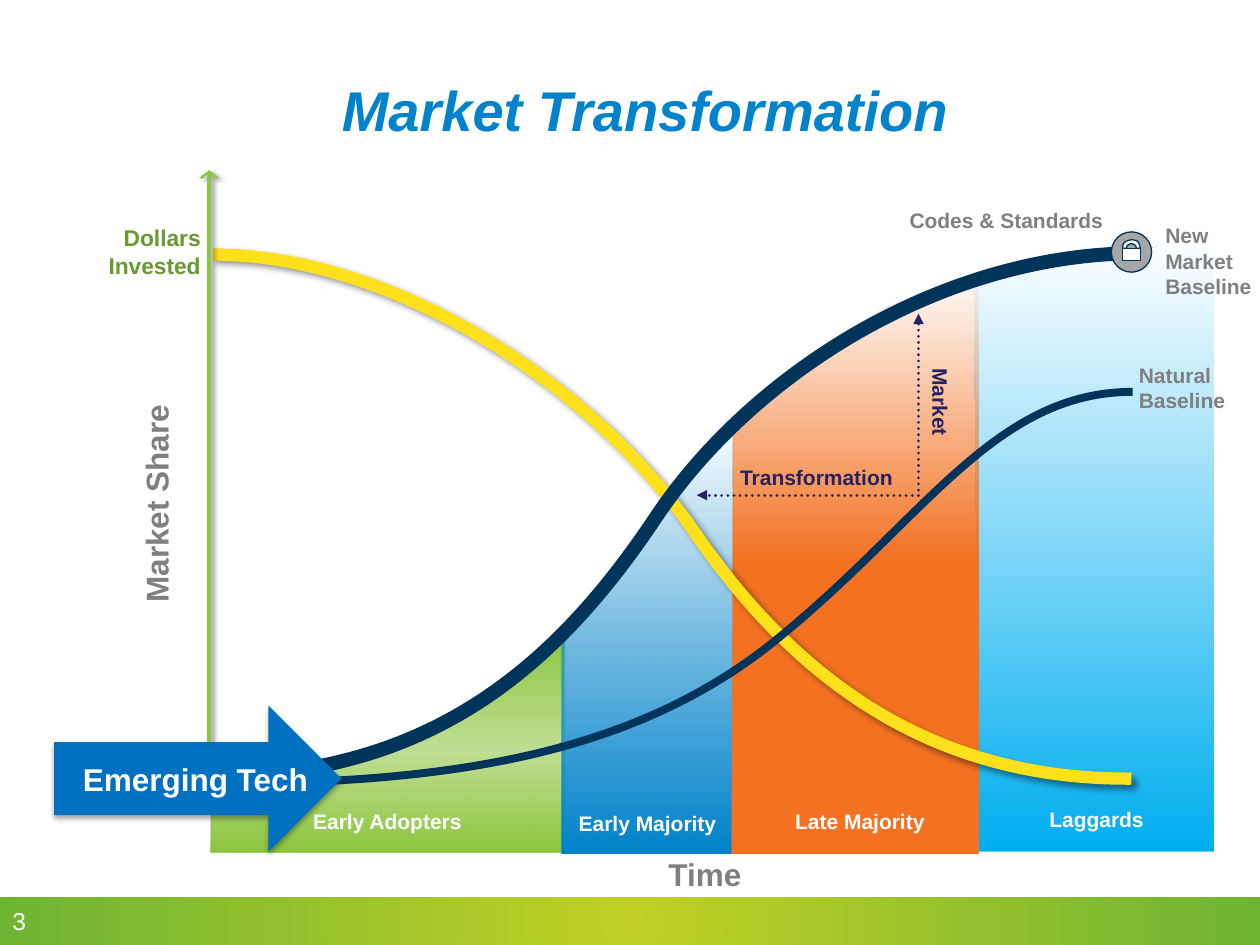
from lxml import etree
from pptx import Presentation
from pptx.dml.color import RGBColor
from pptx.enum.dml import MSO_LINE
from pptx.enum.shapes import MSO_CONNECTOR, MSO_SHAPE
from pptx.enum.text import MSO_ANCHOR, PP_ALIGN as ALIGN
from pptx.oxml import parse_xml
from pptx.oxml.ns import nsdecls, qn
from pptx.util import Inches, Pt

GRAY, NAVY, INDIGO, WHITE = "808080", "00345B", "262262", "FFFFFF"
LINEAR = '<a:lin ang="{}" scaled="0"/>'
UP, DOWN = LINEAR.format(16200000), LINEAR.format(5400000)
RADIAL = '<a:path path="circle"><a:fillToRect l="50000" t="50000" r="50000" b="50000"/></a:path>'

STAGES = [
    ([(8.54, 2.05), (8.94, 2.02), (9.43, 1.9), (9.64, 1.89), (9.64, 6.76), (7.77, 6.76),
      (7.73, 2.24), (8.13, 2.11)],
     [(0, "00AEEF", 100), (100, WHITE, 100)], UP),
    ([(3.34, 5.83), (3.86, 5.54), (4.08, 5.39), (4.48, 5.01), (4.47, 6.77), (1.67, 6.77),
      (1.68, 6.15), (2.03, 6.15), (2.49, 6.09), (2.93, 5.99)],
     [(0, "8DC63F", 100), (46, "8DC63F", 55), (100, "8DC63F", 100)], UP),
    ([(5.11, 4.16), (5.4, 3.78), (5.82, 3.33), (5.82, 6.77), (4.46, 6.77), (4.46, 5.01),
      (4.88, 4.52)],
     [(0, "0083CA", 0), (50, "0083CA", 54), (100, "0083CA", 100)], DOWN),
    ([(6.65, 2.66), (7.04, 2.43), (7.49, 2.24), (7.77, 2.16), (7.77, 6.77), (5.81, 6.77),
      (5.82, 3.39), (6.21, 3.01)],
     [(0, "F37121", 100), (50, "F37121", 100), (100, "F37121", 0)], UP),
]
DOLLARS_CURVE = [(1.68, 2.02), (3.12, 2.02), (4.7, 3.05), (5.51, 4.22),
                 (6.32, 5.4), (7.4, 6.19), (8.98, 6.18)]
NATURAL_CURVE = [(1.68, 6.22), (3.48, 6.22), (5.01, 6.02), (6.17, 5.07),
                 (7.33, 4.13), (7.89, 3.11), (8.99, 3.11)]
MARKET_CURVE = [(1.68, 6.16), (3.48, 6.16), (4.47, 5.21), (5.21, 4.1),
                (5.96, 2.98), (7.45, 2.02), (9.02, 2.01)]
S_CURVE = [3, 3]
SHACKLE = [(8.91, 1.97), (8.91, 1.94), (8.92, 1.92), (8.95, 1.91), (8.97, 1.9),
           (9, 1.9), (9.02, 1.91), (9.04, 1.92), (9.05, 1.95), (9.05, 1.97),
           (9.02, 1.97), (9.02, 1.96), (9.01, 1.94), (9, 1.94), (8.99, 1.93),
           (8.97, 1.93), (8.96, 1.94), (8.95, 1.94), (8.94, 1.96), (8.94, 1.97)]
SHACKLE_SEGMENTS = [3, 3, 3, 1, 3, 3, 3]
LABELS = [
    ("Time", (4.49, 6.74, 2.21, 0.4), dict(size=18, color=GRAY, align=ALIGN.CENTER)),
    ("Natural Baseline", (8.94, 2.83, 1.06, 0.5), dict(color=GRAY)),
    ("Codes & Standards", (7.12, 1.6, 1.79, 0.3), dict(color=GRAY)),
    ("New\vMarket\vBaseline", (9.15, 1.72, 1.06, 0.71), dict(color=GRAY)),
    ("Market Share", (0.34, 3.78, 1.8, 0.4), dict(size=18, color=GRAY, rotation=270)),
    ("Early Majority", (4.46, 6.41, 1.36, 0.29), dict(align=ALIGN.CENTER, spacing=0.9)),
    ("Late Majority", (5.83, 6.37, 1.99, 0.3), dict(align=ALIGN.CENTER)),
    ("Early Adopters", (1.68, 6.37, 2.79, 0.3), dict(align=ALIGN.CENTER)),
    ("Laggards", (8.23, 6.35, 0.96, 0.3), dict(wrap=False)),
    ("Transformation", (5.57, 3.64, 1.82, 0.3), dict(color=INDIGO, align=ALIGN.CENTER)),
    ("Market", (6.56, 3.04, 1.81, 0.3), dict(color=INDIGO, align=ALIGN.CENTER, rotation=90)),
    ("Emerging Tech", (0.56, 5.98, 2.03, 0.4), dict(size=18)),
]

presentation = Presentation()
presentation.slide_width, presentation.slide_height = Inches(10), Inches(7.5)
slide = presentation.slides.add_slide(presentation.slide_layouts[6])
shapes = slide.shapes


def rgb(value):
    return RGBColor.from_string(value)


def inches(values):
    return [Inches(value) for value in values]


def set_shadow(shape, opacity, blur, distance, angle):
    effects = shape._element.spPr.find(qn("a:effectLst"))
    effects.append(parse_xml(
        f'<a:outerShdw {nsdecls("a")} blurRad="{Pt(blur)}" dist="{Pt(distance)}" '
        f'dir="{angle * 60000}" algn="tl" rotWithShape="0"><a:srgbClr val="000000">'
        f'<a:alpha val="{opacity * 1000}"/></a:srgbClr></a:outerShdw>'))


def set_gradient(shape, stops, direction):
    shape.fill.background()
    properties = shape._element.spPr
    stop_xml = "".join(
        f'<a:gs pos="{position * 1000}"><a:srgbClr val="{color}">'
        f'<a:alpha val="{opacity * 1000}"/></a:srgbClr></a:gs>'
        for position, color, opacity in stops)
    properties.replace(properties.find(qn("a:noFill")), parse_xml(
        f'<a:gradFill {nsdecls("a")} rotWithShape="1"><a:gsLst>{stop_xml}</a:gsLst>'
        f'{direction}</a:gradFill>'))


def style(shape, fill=None, line=None, width=0.75):
    shape.shadow.inherit = False
    if fill:
        shape.fill.solid()
        shape.fill.fore_color.rgb = rgb(fill)
    else:
        shape.fill.background()
    if line:
        shape.line.color.rgb = rgb(line)
        shape.line.width = Pt(width)
    else:
        shape.line.fill.background()
    return shape


def add_preset(kind, box, **look):
    return style(shapes.add_shape(kind, *inches(box)), **look)


def bend(shape, segments):
    lines = iter(list(shape._element.iter(qn("a:lnTo"))))
    for size in segments:
        first, *others = [next(lines) for _ in range(size)]
        if others:
            first.tag = qn("a:cubicBezTo")
            for other in others:
                first.append(other[0])
                other.getparent().remove(other)


def add_outline(points, segments=(), closed=True, **look):
    start, *rest = [tuple(inches(point)) for point in points]
    builder = shapes.build_freeform(*start)
    builder.add_line_segments(rest, close=closed)
    shape = style(builder.convert_to_shape(), **look)
    bend(shape, segments)
    return shape


def add_arrow(start, end, color, width, head, dash=None):
    arrow = shapes.add_connector(MSO_CONNECTOR.STRAIGHT, *inches(start + end))
    arrow.line.color.rgb = rgb(color)
    arrow.line.width = Pt(width)
    outline = arrow.line._get_or_add_ln()
    if dash:
        arrow.line.dash_style = dash
        outline.set("cap", "rnd")
    etree.SubElement(outline, qn("a:tailEnd"), **head)
    etree.SubElement(arrow._element.spPr, qn("a:effectLst"))
    return arrow


def add_text(text, box, size=12, color=WHITE, bold=True, italic=False, align=ALIGN.LEFT,
             anchor=MSO_ANCHOR.TOP, rotation=0, wrap=True, spacing=None):
    shape = shapes.add_textbox(*inches(box))
    shape.rotation = rotation
    frame = shape.text_frame
    frame.word_wrap = wrap
    frame.vertical_anchor = anchor
    paragraph = frame.paragraphs[0]
    paragraph.text = text
    paragraph.alignment = align
    paragraph.line_spacing = spacing
    for run in paragraph.runs:
        font = run.font
        font.name, font.size, font.bold, font.italic = "Arial", Pt(size), bold, italic
        font.color.rgb = rgb(color)
    return shape


footer = add_preset(MSO_SHAPE.RECTANGLE, (0, 7.12, 10.01, 0.38))
set_gradient(footer, [(0, "C0D025", 100), (100, "6FB433", 100)], RADIAL)
add_text("3", (0, 7.14, 0.64, 0.34), size=14, bold=False)
add_text("Market Transformation", (0.62, 0.24, 9, 1.25), size=32, color="0083CA",
         italic=True, align=ALIGN.CENTER, anchor=MSO_ANCHOR.MIDDLE)

for outline, stops, direction in STAGES:
    set_gradient(add_outline(outline), stops, direction)

dollars = add_outline(DOLLARS_CURVE, S_CURVE, closed=False, line="FFE11B", width=7)
set_shadow(dollars, 43, 4, 3, 45)
dollars_label = add_text("Dollars Invested", (0.62, 1.73, 1.07, 0.54), size=13,
                         color="699A2F", align=ALIGN.RIGHT)
dollars_label.fill.solid()
dollars_label.fill.fore_color.rgb = rgb(WHITE)
share_axis = add_arrow((1.66, 6.33), (1.66, 1.35), "8DC63F", 2,
                       dict(type="arrow", w="lg", len="sm"))
set_shadow(share_axis, 43, 3, 2, 45)

for curve, width in [(NATURAL_CURVE, 4.5), (MARKET_CURVE, 8)]:
    add_outline(curve, S_CURVE, closed=False, line=NAVY, width=width)
add_preset(MSO_SHAPE.OVAL, (8.82, 1.84, 0.32, 0.32), fill="A6A6A6", line=NAVY)
add_preset(MSO_SHAPE.RECTANGLE, (8.91, 1.97, 0.14, 0.1), fill=WHITE, line=NAVY)
add_outline(SHACKLE, SHACKLE_SEGMENTS, fill=WHITE, line=NAVY)

for start, end in [((7.29, 3.93), (5.53, 3.93)), ((7.29, 3.89), (7.29, 2.49))]:
    add_arrow(start, end, INDIGO, 1.75, dict(type="triangle"), MSO_LINE.ROUND_DOT)

emerging = add_preset(MSO_SHAPE.RIGHT_ARROW, (0.43, 5.6, 2.28, 1.16), fill="0070C0")
set_shadow(emerging, 35, 3.1, 1.8, 90)

for text, box, look in LABELS:
    add_text(text, box, **look)

presentation.save("out.pptx")
